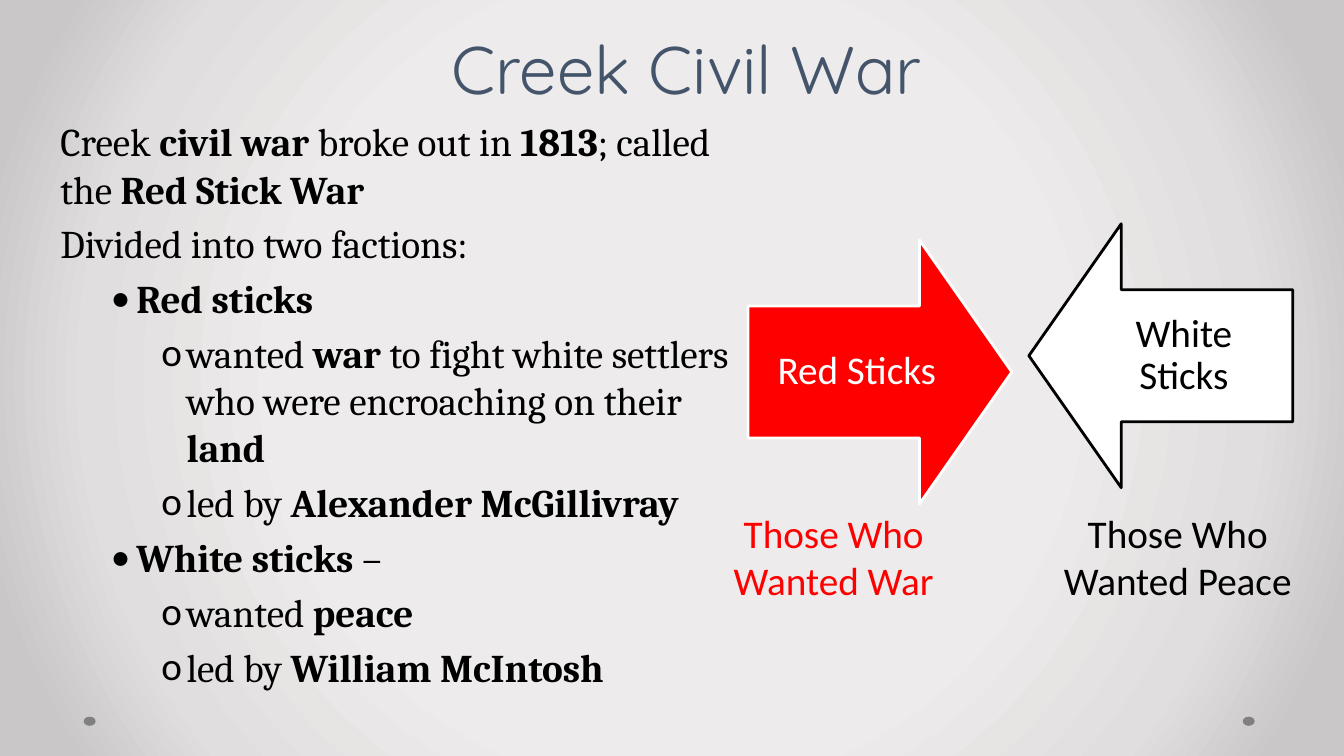
from collections import namedtuple
from dataclasses import dataclass

from lxml import etree
from pptx import Presentation
from pptx.dml.color import RGBColor
from pptx.enum.shapes import MSO_SHAPE
from pptx.enum.text import MSO_ANCHOR, MSO_AUTO_SIZE, PP_ALIGN
from pptx.oxml.ns import qn
from pptx.util import Cm, Pt

OVAL = MSO_SHAPE.OVAL
RIGHT_ARROW, LEFT_ARROW = MSO_SHAPE.RIGHT_ARROW, MSO_SHAPE.LEFT_ARROW
TOP, MIDDLE, BOTTOM = MSO_ANCHOR.TOP, MSO_ANCHOR.MIDDLE, MSO_ANCHOR.BOTTOM
LEFT, CENTER = PP_ALIGN.LEFT, PP_ALIGN.CENTER
NO_AUTOFIT = MSO_AUTO_SIZE.NONE

Box = namedtuple("Box", "left top width height")  # centimetres


@dataclass(frozen=True)
class Theme:
    black: str = "000000"
    white: str = "FFFFFF"
    red: str = "FF0000"
    slate: str = "44546A"
    grey: str = "808080"
    backdrop: tuple = ((50, "EDEBEB"), (76, "E0DEDE"), (92, "C9C7C7"))
    title_font: str = "Quicksand"
    body_font: str = "Cambria"
    label_font: str = "Calibri"
    title_size: int = 48
    text_size: int = 28


THEME = Theme()

# Left margin, first-line indent (cm) and bullet for each outline level
LEVELS = ((1.27, 0, None), (3.18, -0.64, "•"), (4.45, -0.64, "o"))

# Outline level and text; ** switches bold on and off
OUTLINE = (
    (0, "Creek **civil war **broke out in **1813**; called the **Red Stick War**"),
    (0, "Divided into two factions:"),
    (1, "**Red sticks**"),
    (2, "wanted **war** to fight white settlers who were encroaching on their **land**"),
    (2, "led by **Alexander McGillivray**"),
    (1, "**White sticks **–"),
    (2, "wanted **peace**"),
    (2, "led by **William McIntosh**"),
)


def apply(target, values):
    for name, value in values.items():
        setattr(target, name, value)


def place(shape, box):
    apply(shape, {name: Cm(value) for name, value in box._asdict().items()})


def set_frame(frame, anchor):
    apply(frame, {"word_wrap": True, "auto_size": NO_AUTOFIT,
                  "vertical_anchor": anchor})


def add_span(para, text, font, size, color, bold=False):
    span = para.add_run()
    span.text = text
    apply(span.font, {"name": font, "size": Pt(size), "bold": bold})
    span.font.color.rgb = RGBColor.from_string(color)


def fill_shape(shape, color):
    shape.shadow.inherit = False
    shape.fill.solid()
    shape.fill.fore_color.rgb = RGBColor.from_string(color)


def set_bullet(para, bullet):
    properties = para._p.get_or_add_pPr()
    if bullet is None:
        etree.SubElement(properties, qn("a:buNone"))
        return
    etree.SubElement(properties, qn("a:buFont"), typeface=THEME.label_font)
    etree.SubElement(properties, qn("a:buChar"), char=bullet)


def paint_background(page):
    page.background.fill.gradient()
    gradient = page.element.find(".//" + qn("a:gradFill"))
    for child in list(gradient):
        gradient.remove(child)
    stops = etree.SubElement(gradient, qn("a:gsLst"))
    for percent, color in THEME.backdrop:
        stop = etree.SubElement(stops, qn("a:gs"), pos=str(percent * 1000))
        etree.SubElement(stop, qn("a:srgbClr"), val=color)
    circle = etree.SubElement(gradient, qn("a:path"), path="circle")
    centre = dict.fromkeys("ltrb", "50000")
    etree.SubElement(circle, qn("a:fillToRect"), centre)


def add_footer_dots(page, box):
    size = 0.3
    for left in (box.left, box.left + box.width - size):
        dot = page.shapes.add_shape(OVAL, 0, 0, 0, 0)
        place(dot, Box(left, box.top, size, box.height))
        fill_shape(dot, THEME.grey)
        dot.line.fill.background()


def write_title(page, box):
    title = page.shapes.title
    place(title, box)
    set_frame(title.text_frame, BOTTOM)
    para = title.text_frame.paragraphs[0]
    apply(para, {"alignment": CENTER, "line_spacing": Pt(48)})
    add_span(para, "Creek Civil War", THEME.title_font, THEME.title_size, THEME.slate)


def write_outline(page, box):
    body = page.placeholders[1]
    place(body, box)
    frame = body.text_frame
    set_frame(frame, TOP)
    for number, (level, text) in enumerate(OUTLINE):
        para = frame.add_paragraph() if number else frame.paragraphs[0]
        margin, indent, bullet = LEVELS[level]
        apply(para, {"level": level, "alignment": LEFT,
                     "space_before": Pt(THEME.text_size * 0.2)})
        properties = para._p.get_or_add_pPr()
        properties.set("marL", str(Cm(margin)))
        properties.set("indent", str(Cm(indent)))
        set_bullet(para, bullet)
        for part, piece in enumerate(text.split("**")):
            if piece:
                add_span(para, piece, THEME.body_font, THEME.text_size,
                         THEME.black, bold=part % 2 == 1)


def add_faction_arrow(page, box, kind, label, fill, line, ink):
    arrow = page.shapes.add_shape(kind, 0, 0, 0, 0)
    place(arrow, box)
    arrow.adjustments[0], arrow.adjustments[1] = 0.5, 0.35
    fill_shape(arrow, fill)
    arrow.line.color.rgb = RGBColor.from_string(line)
    arrow.line.width = Pt(2)
    frame = arrow.text_frame
    set_frame(frame, MIDDLE)
    margins = ("margin_left", "margin_top", "margin_right", "margin_bottom")
    apply(frame, dict.fromkeys(margins, Cm(0.56)))
    para = frame.paragraphs[0]
    apply(para, {"alignment": CENTER, "line_spacing": 0.9})
    add_span(para, label, THEME.label_font, THEME.text_size, ink)


def add_caption(page, box, text, color):
    caption = page.shapes.add_textbox(0, 0, 0, 0)
    place(caption, box)
    set_frame(caption.text_frame, TOP)
    para = caption.text_frame.paragraphs[0]
    para.alignment = CENTER
    add_span(para, text, THEME.label_font, THEME.text_size, color)


def main():
    deck = Presentation()
    deck.slide_width, deck.slide_height = Cm(33.87), Cm(19.05)
    page = deck.slides.add_slide(deck.slide_layouts[1])

    # Backdrop
    paint_background(page)
    add_footer_dots(page, Box(2.11, 18.06, 29.51, 0.23))

    # Title and outline
    write_title(page, Box(2.06, -1.6, 30.48, 4.45))
    write_outline(page, Box(0, 2.84, 18.62, 13.84))

    # Opposing factions
    add_faction_arrow(page, Box(18.85, 6.05, 6.65, 6.65), RIGHT_ARROW,
                      "Red Sticks", THEME.red, THEME.white, THEME.white)
    add_faction_arrow(page, Box(25.93, 5.64, 6.65, 6.65), LEFT_ARROW,
                      "White Sticks", THEME.white, THEME.black, THEME.black)
    add_caption(page, Box(17.91, 12.7, 6.2, 2.64), "Those Who Wanted War", THEME.red)
    add_caption(page, Box(26.29, 12.7, 6.78, 2.64), "Those Who Wanted Peace", THEME.black)

    deck.save("out.pptx")


if __name__ == "__main__":
    main()
